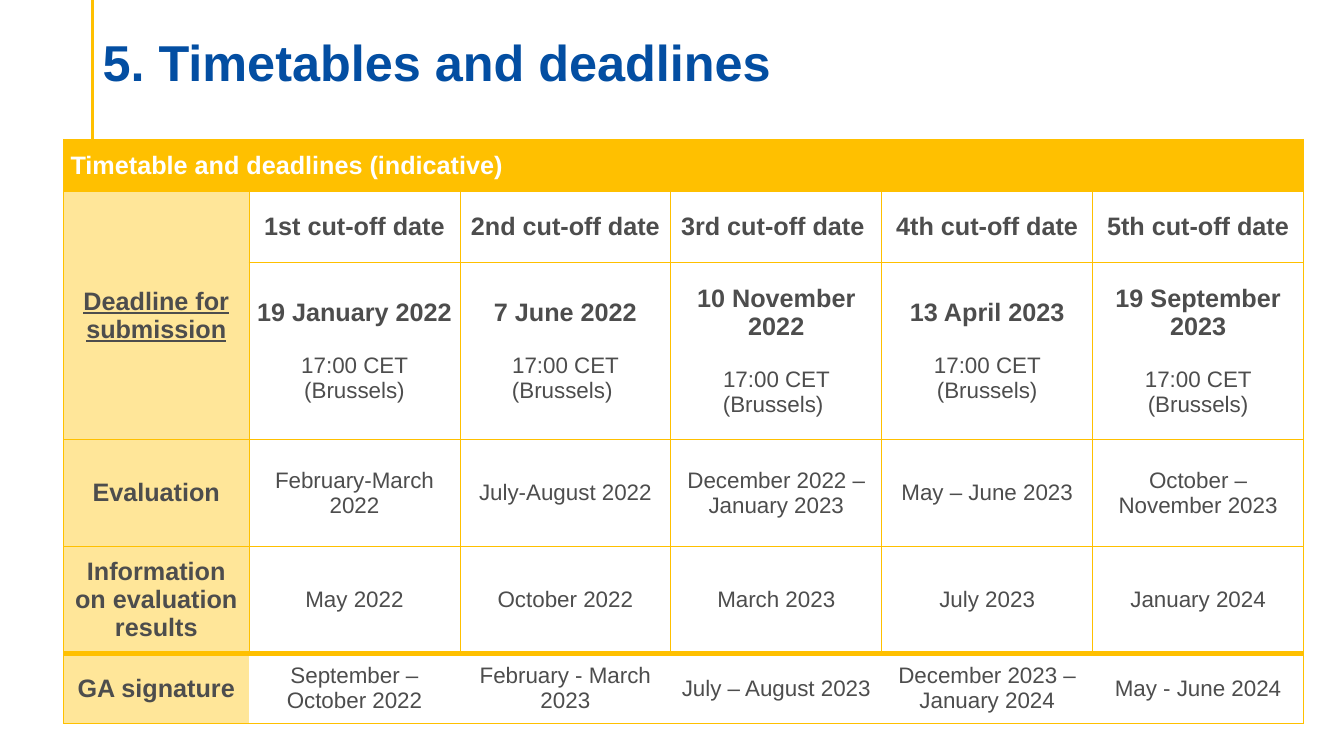
from dataclasses import dataclass

from lxml import etree
from pptx import Presentation
from pptx.dml.color import RGBColor
from pptx.enum.shapes import MSO_CONNECTOR
from pptx.enum.text import MSO_ANCHOR, PP_ALIGN
from pptx.oxml.ns import qn
from pptx.util import Inches, Pt

STRAIGHT = MSO_CONNECTOR.STRAIGHT
MIDDLE = MSO_ANCHOR.MIDDLE
LEFT, CENTER = PP_ALIGN.LEFT, PP_ALIGN.CENTER


@dataclass(frozen=True)
class Theme:
    """Colours, font and type sizes of the slide."""
    font: str = "Arial"
    blue: str = "034EA2"
    gold: str = "FFC000"
    sand: str = "FFE699"
    white: str = "FFFFFF"
    grey: str = "4D4D4D"
    title: int = 36
    strong: int = 18
    body: int = 16
    time_gap: int = 19


THEME = Theme()
LABEL_WIDTH = 1.84
DATE_COLS = 5
ROW_HEIGHTS = [0.52, 0.7, 1.76, 1.06, 1.06, 0.7]
HEADER, CUT_OFF, DEADLINE, EVALUATION, RESULTS, SIGNATURE = range(6)
TABLE_TITLE = "Timetable and deadlines (indicative)"
LABELS = {
    CUT_OFF: "Deadline for submission",
    EVALUATION: "Evaluation",
    RESULTS: "Information on evaluation results",
    SIGNATURE: "GA signature",
}
DATES = {
    CUT_OFF: ["1st cut-off date", "2nd cut-off date", "3rd cut-off date ",
              "4th cut-off date", "5th cut-off date"],
    DEADLINE: ["19 January 2022", "7 June 2022", "10 November 2022",
               "13 April 2023", "19 September 2023"],
    EVALUATION: ["February-March 2022", "July-August 2022",
                 "December 2022 – January 2023", "May – June 2023",
                 "October – November 2023"],
    RESULTS: ["May 2022", "October 2022", "March 2023", "July 2023",
              "January 2024"],
    SIGNATURE: ["September – October 2022", "February - March 2023",
                "July – August 2023", "December 2023 – January 2024",
                "May - June 2024"],
}
TIMES = ["17:00 CET (Brussels)", "17:00 CET (Brussels) ",
         "17:00 CET (Brussels) ", "17:00 CET (Brussels)",
         "17:00 CET (Brussels)"]


def add_run(p, text, size, color, bold=False, underline=False):
    """Add one styled run to a paragraph."""
    r = p.add_run()
    r.text = text
    r.font.name = THEME.font
    r.font.size = Pt(size)
    r.font.bold = bold
    r.font.underline = underline
    r.font.color.rgb = RGBColor.from_string(color)


def set_borders(cell, widths):
    """Draw the gold cell borders; a zero width leaves that side open."""
    tc_pr = cell._tc.get_or_add_tcPr()
    for side in "LRTB":
        ln = etree.SubElement(tc_pr, qn(f"a:ln{side}"))
        if widths[side]:
            ln.set("w", str(Pt(widths[side])))
            fill = etree.SubElement(ln, qn("a:solidFill"))
            etree.SubElement(fill, qn("a:srgbClr"), val=THEME.gold)
        else:
            etree.SubElement(ln, qn("a:noFill"))


def border_widths(row, col):
    """Return the border widths in points for a cell."""
    widths = dict.fromkeys("LRTB", 0.5)
    if row == SIGNATURE:
        widths["T"] = 4
        if col > 0:
            widths["L"] = 0
        if col < DATE_COLS:
            widths["R"] = 0
    if row == RESULTS:
        widths["B"] = 4
    if col == 0 and row in (CUT_OFF, DEADLINE):
        widths["B"] = 1
    if col == 0 and row == DEADLINE:
        widths["T"] = 0
    if col == 0 and row == EVALUATION:
        widths["T"] = 1
    return widths


def format_cell(cell, row, col):
    """Set borders, fill, insets and alignment of a cell."""
    set_borders(cell, border_widths(row, col))
    color = THEME.gold if row == HEADER else THEME.white if col else THEME.sand
    cell.fill.solid()
    cell.fill.fore_color.rgb = RGBColor.from_string(color)
    cell.margin_left = cell.margin_right = Inches(0.07)
    cell.margin_top = cell.margin_bottom = 0
    cell.vertical_anchor = MIDDLE
    cell.text_frame.paragraphs[0].alignment = LEFT if row == HEADER else CENTER


def write_cell(cell, row, col):
    """Write the wording of a cell."""
    tf = cell.text_frame
    p = tf.paragraphs[0]
    if row == HEADER:
        add_run(p, TABLE_TITLE, THEME.strong, THEME.white, bold=True)
    elif col == 0:
        add_run(p, LABELS[row], THEME.strong, THEME.grey, bold=True,
                underline=row == CUT_OFF)
    else:
        strong = row in (CUT_OFF, DEADLINE)
        size = THEME.strong if strong else THEME.body
        add_run(p, DATES[row][col - 1], size, THEME.grey, bold=strong)
    if row == DEADLINE:
        p = tf.add_paragraph()
        p.alignment = CENTER
        p.space_before = Pt(THEME.time_gap)
        add_run(p, TIMES[col - 1], THEME.body, THEME.grey)


def add_rule(slide, x, y, height):
    """Draw the vertical gold rule beside the title."""
    line = slide.shapes.add_connector(
        STRAIGHT, Inches(x), Inches(y), Inches(x), Inches(y + height))
    line.line.color.rgb = RGBColor.from_string(THEME.gold)
    line.line.width = Pt(2.25)
    etree.SubElement(line._element.spPr, qn("a:effectLst"))


def add_title(slide, x, y, width, height):
    """Place the slide title in its box."""
    sp = slide.shapes.add_textbox(
        Inches(x), Inches(y), Inches(width), Inches(height))
    tf = sp.text_frame
    tf.word_wrap = True
    tf.vertical_anchor = MIDDLE
    tf.margin_left = tf.margin_right = Inches(0.1)
    tf.margin_top, tf.margin_bottom = Inches(0.05), 0
    p = tf.paragraphs[0]
    p.line_spacing = 0.9
    add_run(p, "5. Timetables and deadlines", THEME.title, THEME.blue, bold=True)


def add_timetable(slide, x, y, width, height):
    """Place the timetable in its box."""
    table = slide.shapes.add_table(
        len(ROW_HEIGHTS), DATE_COLS + 1, Inches(x), Inches(y),
        Inches(width), Inches(height)).table
    table.horz_banding = False
    date_width = (width - LABEL_WIDTH) / DATE_COLS
    for column, size in zip(table.columns, [LABEL_WIDTH] + [date_width] * DATE_COLS):
        column.width = Inches(size)
    for row, size in zip(table.rows, ROW_HEIGHTS):
        row.height = Inches(size)
    table.cell(HEADER, 0).merge(table.cell(HEADER, DATE_COLS))
    table.cell(CUT_OFF, 0).merge(table.cell(DEADLINE, 0))
    for row in range(len(ROW_HEIGHTS)):
        for col in range(DATE_COLS + 1):
            cell = table.cell(row, col)
            format_cell(cell, row, col)
            if not cell.is_spanned:
                write_cell(cell, row, col)


def main():
    """Build and save the slide."""
    prs = Presentation()
    prs.slide_width, prs.slide_height = Inches(13.33), Inches(7.5)
    slide = prs.slides.add_slide(prs.slide_layouts[6])
    add_rule(slide, 0.92, 0, 1.4)
    add_title(slide, 0.92, 0.19, 11.5, 0.86)
    add_timetable(slide, 0.63, 1.38, 12.3, 5.8)
    prs.save("out.pptx")


if __name__ == "__main__":
    main()
